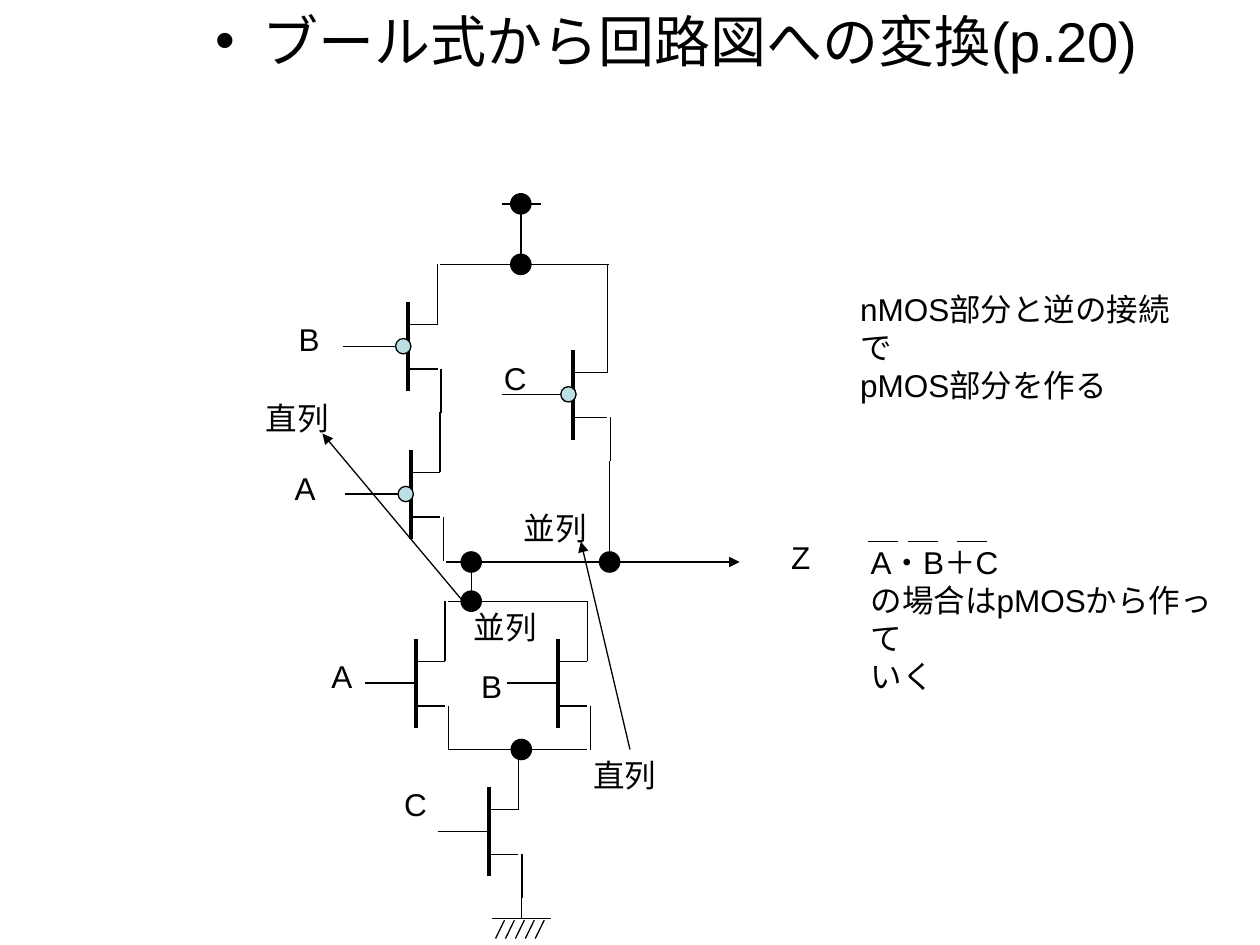
from pptx import Presentation
from pptx.dml.color import RGBColor
from pptx.enum.shapes import MSO_CONNECTOR, MSO_SHAPE
from pptx.enum.text import MSO_ANCHOR, PP_ALIGN
from pptx.oxml.ns import qn
from pptx.util import Cm, Pt
from lxml.etree import SubElement

HUES = {"ink": "000000", "gate": "BBE0E3"}
FRAME = {"margin_left": Cm(0.25), "margin_right": Cm(0.25),
         "margin_top": Cm(0.13), "margin_bottom": Cm(0.13),
         "vertical_anchor": MSO_ANCHOR.TOP}
FONT = {"name": "Arial", "size": Pt(18)}


def hue(name):
    return RGBColor.from_string(HUES[name])


def line(slide, x1, y1, x2, y2, width=0.75, arrow=False):
    wire = slide.shapes.add_connector(
        MSO_CONNECTOR.STRAIGHT, Cm(x1), Cm(y1), Cm(x2), Cm(y2))
    wire.line.color.rgb = hue("ink")
    wire.line.width = Pt(width)
    if arrow:
        SubElement(wire.line._get_or_add_ln(), qn("a:tailEnd"), type="triangle")
    SubElement(wire._element.spPr, qn("a:effectLst"))


def disc(slide, x, y, size, fill, width):
    """Draw a circle centred on x, y."""
    ring = slide.shapes.add_shape(
        MSO_SHAPE.OVAL, Cm(x - size / 2), Cm(y - size / 2), Cm(size), Cm(size))
    ring.shadow.inherit = False
    ring.fill.solid()
    ring.fill.fore_color.rgb = hue(fill)
    ring.line.color.rgb = hue("ink")
    ring.line.width = Pt(width)


def dots(slide, x, y, spots):
    for dx, dy in spots:
        disc(slide, x + dx, y + dy, 0.4, "ink", 1)


def text(slide, x, y, w, h, rows, wrap=False, size=18):
    frame = slide.shapes.add_textbox(Cm(x), Cm(y), Cm(w), Cm(h)).text_frame
    for key, value in (FRAME | {"word_wrap": wrap}).items():
        setattr(frame, key, value)
    for i, row in enumerate(rows):
        para = frame.paragraphs[0] if i == 0 else frame.add_paragraph()
        para.alignment = PP_ALIGN.LEFT
        run = para.add_run()
        run.text = row
        for key, value in (FONT | {"size": Pt(size)}).items():
            setattr(run.font, key, value)
        run.font.color.rgb = hue("ink")
    return frame


def labels(slide, x, y, marks, width=0.95):
    for mark, dx, dy in marks:
        text(slide, x + dx, y + dy, width, 1.02, [mark])


def switch(slide, x, y, kind="n", reach=0.59, lead=1.03):
    """Draw a transistor with its bar at x and its upper pin at y."""
    line(slide, x, y + 0.76, x, y + 2.56, 2.25)
    for tap in (1.21, 2.11):
        line(slide, x, y + tap, x + reach, y + tap)
    line(slide, x + reach, y + 1.21, x + reach, y)
    line(slide, x + reach + 0.07, y + 2.11, x + reach + 0.07, y + 3)
    start = x
    if kind == "p":
        start = x - 0.25
        disc(slide, x - 0.1, y + 1.65, 0.31, "gate", 0.75)
    line(slide, start, y + 1.65, x - lead, y + 1.65)


def title(slide, x, y, w, h):
    frame = text(slide, x, y, w, h, ["ブール式から回路図への変換(p.20)"], True, 32)
    para = frame.paragraphs[0]
    para.space_before = Pt(6.4)
    props = para._p.get_or_add_pPr()
    props.set("marL", str(Cm(0.95)))
    props.set("indent", str(Cm(-0.95)))
    SubElement(props, qn("a:buFont"), typeface="Arial")
    SubElement(props, qn("a:buChar"), char="•")


def pull_up(slide, x, y):
    for x1, y1, x2, y2 in ((4.42, 0, 5.21, 0), (4.81, 0, 4.81, 1.22),
                           (3.17, 1.22, 6.58, 1.22), (6.55, 1.22, 6.55, 2.19),
                           (6.6, 5.19, 6.6, 7.22)):
        line(slide, x + x1, y + y1, x + x2, y + y2)
    for dx, dy in ((2.54, 1.22), (2.59, 4.2)):
        switch(slide, x + dx, y + dy, "p", lead=1.32)
    switch(slide, x + 5.87, y + 2.19, "p", 0.68, 1.45)
    labels(slide, x, y, (("B", 0.08, 2.21), ("A", 0, 5.21), ("C", 4.22, 3)))
    dots(slide, x, y, ((4.81, 0), (4.81, 1.22)))


def pull_down(slide, x, y):
    line(slide, x + 2.56, y, x + 8.48, y, arrow=True)
    line(slide, x + 3.07, y, x + 3.07, y + 0.79)
    for rail in (0.79, 3.78):
        line(slide, x + 2.61, y + rail, x + 5.41, y + rail)
    for dx, dy in ((1.95, 0.79), (4.82, 0.79), (3.43, 3.78)):
        switch(slide, x + dx, y + dy)
    line(slide, x + 4.08, y + 6.78, x + 4.08, y + 7.19)
    labels(slide, x, y, (("A", 0, 1.78), ("B", 3.02, 1.98),
                         ("C", 1.47, 4.37), ("Z", 9.27, -0.61)))
    dots(slide, x, y, ((3.07, 0), (3.07, 0.79), (4.08, 3.78), (5.86, 0)))


def ground(slide, x, y, w):
    line(slide, x, y, x + w, y)
    for i in range(5):
        top = x + 0.26 + 0.2 * i
        line(slide, top, y + 0.03, top - 0.18, y + 0.4)


def links(slide, x, y):
    """Name the series and parallel parts and join each to its dual."""
    labels(slide, x, y, (("直列", 0, 0), ("並列", 5.2, 2.21),
                         ("並列", 4.19, 4.2), ("直列", 6.6, 7.19)), 1.78)
    line(slide, x + 4.39, y + 4.4, x + 1.39, y + 0.82, arrow=True)
    line(slide, x + 7.59, y + 7.19, x + 6.6, y + 3, arrow=True)


def rule(slide, x, y, w, h):
    text(slide, x, y, w, h, ["nMOS部分と逆の接続で", "pMOS部分を作る"], True)


def case(slide, x, y, w, h):
    """Write the barred formula and its remark."""
    text(slide, x, y, w, h,
         ["A・B＋C", "の場合はpMOSから作って", "いく"], True)
    for dx in (0.2, 1, 2):
        line(slide, x + dx, y + 0.1, x + dx + 0.6, y + 0.1)


def main():
    deck = Presentation()
    deck.slide_width, deck.slide_height = Cm(25.4), Cm(19.05)
    slide = deck.slides.add_slide(deck.slide_layouts[6])
    title(slide, 4.09, 0, 22.86, 1.88)
    pull_down(slide, 6.43, 11.33)
    ground(slide, 9.91, 18.52, 1.19)
    pull_up(slide, 5.69, 4.11)
    links(slide, 5.11, 7.92)
    rule(slide, 17.09, 5.72, 7.19, 1.78)
    case(slide, 17.3, 10.82, 7.72, 2.54)
    deck.save("out.pptx")


if __name__ == "__main__":
    main()
